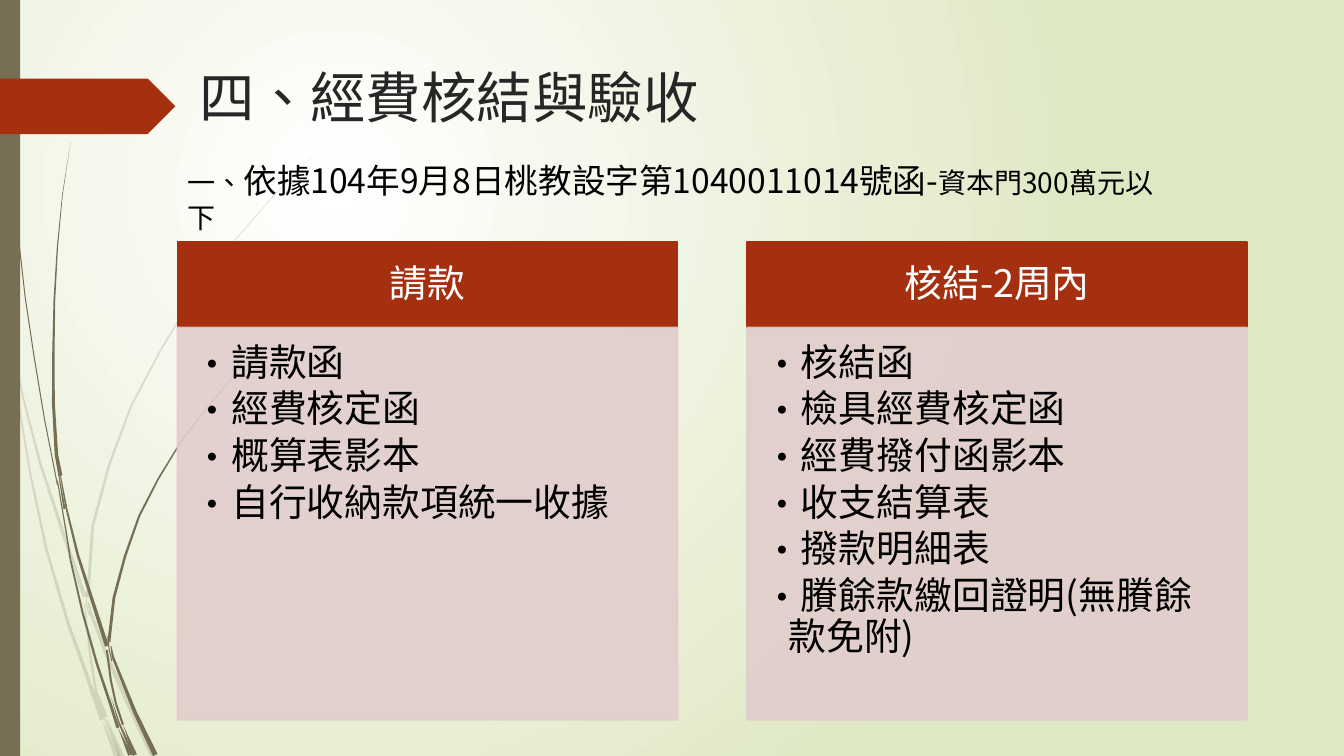
"""Build the slide on closing and accepting project expenses."""
from dataclasses import dataclass
from math import hypot

from lxml import etree
from pptx import Presentation
from pptx.dml.color import RGBColor
from pptx.enum.shapes import MSO_SHAPE
from pptx.enum.text import MSO_ANCHOR, PP_ALIGN
from pptx.oxml.ns import qn
from pptx.util import Inches, Pt

RECTANGLE, PENTAGON = MSO_SHAPE.RECTANGLE, MSO_SHAPE.PENTAGON
TOP, MIDDLE = MSO_ANCHOR.TOP, MSO_ANCHOR.MIDDLE
LEFT, CENTER = PP_ALIGN.LEFT, PP_ALIGN.CENTER


@dataclass(frozen=True)
class Theme:
    """Colours, typeface and type sizes of the slide."""
    font: str = "Noto Sans CJK SC"
    grass: str = "766F54"
    accent: str = "A53010"
    panel: str = "E1CDCC"
    title: str = "262626"
    body: str = "000000"
    light: str = "FFFFFF"
    background: str = "DFE8C4"
    title_size: float = 39.6
    intro_size: float = 24
    note_size: float = 20
    card_size: float = 27


@dataclass(frozen=True)
class Blade:
    """A piece of grass along a centre line, with its start and end widths."""
    start_width: float
    end_width: float
    points: tuple[tuple[float, float], ...]


@dataclass(frozen=True)
class Card:
    """A heading above a panel of bullet points."""
    heading: str
    items: tuple[str, ...]


THEME = Theme()
PALE_BLADES = (
    Blade(0.04, 0.01, ((0, 2.9), (0.06, 3.18), (0.11, 3.5))),
    Blade(0.01, 0.04, ((0.14, 3.45), (0.23, 3.95), (0.4, 4.6), (0.6, 5.21), (0.84, 5.92))),
    Blade(0.02, 0.05, ((0.88, 5.98), (0.9, 6.08), (1.07, 6.53), (1.25, 6.93), (1.52, 7.51))),
    Blade(0, 0.05, ((1.05, 7.11), (1.21, 7.51))),
    Blade(0.01, 0.04, ((0.11, 3.5), (0.17, 3.92), (0.3, 4.7), (0.46, 5.45), (0.68, 6.2),
                       (0.84, 6.64), (1.01, 7.14))),
    Blade(0.01, 0.03, ((0.84, 5.99), (0.86, 6.2), (0.89, 6.46), (0.95, 6.85), (1.05, 7.11))),
    Blade(0, 0.03, ((3.12, 1.53), (2.9, 1.75), (2.68, 1.98), (2.28, 2.44), (1.91, 2.95),
                    (1.59, 3.48), (1.3, 4.03), (1.08, 4.62), (0.92, 5.22), (0.87, 5.92))),
    Blade(0, 0.05, ((1.01, 7.14), (1.16, 7.51))),
    Blade(0.01, 0.01, ((0.86, 5.86), (0.86, 6), (0.88, 6.1))),
    Blade(0, 0.02, ((0.93, 6.83), (1.02, 7.09), (1.19, 7.51))),
)
DARK_BLADES = (
    Blade(0.01, 0.01, ((0.04, 0), (0.05, 0.48), (0.08, 1.1), (0.12, 1.72), (0.18, 2.33),
                       (0.25, 2.95), (0.34, 3.55), (0.44, 4.15), (0.57, 4.81))),
    Blade(0.01, 0.04, ((0.6, 4.72), (0.66, 5.05), (0.77, 5.5), (0.9, 5.91), (1.06, 6.41))),
    Blade(0.01, 0.05, ((1.1, 6.41), (1.12, 6.52), (1.34, 7.07), (1.54, 7.49))),
    Blade(0.01, 0.03, ((0.57, 4.77), (0.66, 5.3), (0.7, 5.56), (0.82, 6.08), (0.96, 6.58),
                       (1.1, 7), (1.17, 7.22))),
    Blade(0, 0.04, ((0.7, 1.41), (0.62, 1.93), (0.57, 2.45), (0.54, 2.97), (0.53, 3.49),
                    (0.53, 4), (0.56, 4.51), (0.6, 4.72))),
    Blade(0, 0.04, ((1.22, 7.19), (1.34, 7.49))),
    Blade(0, 0.02, ((0.55, 4.49), (0.59, 4.75), (0.64, 5.05))),
    Blade(0, 0.03, ((2.6, 3.44), (2.45, 3.58), (2.31, 3.74), (2.04, 4.06), (1.79, 4.39),
                    (1.57, 4.75), (1.38, 5.12), (1.24, 5.52), (1.13, 5.93), (1.08, 6.37))),
    Blade(0, 0.04, ((1.17, 7.22), (1.29, 7.49))),
    Blade(0.02, 0.02, ((1.06, 6.45), (1.1, 6.75), (1.15, 6.98), (1.22, 7.19))),
    Blade(0.01, 0.01, ((1.07, 6.31), (1.08, 6.43), (1.11, 6.56))),
    Blade(0, 0.03, ((1.1, 6.91), (1.18, 7.17), (1.32, 7.49))),
)
CARDS = (
    Card("請款", ("請款函", "經費核定函", "概算表影本", "自行收納款項統一收據")),
    Card("核結-2周內", ("核結函", "檢具經費核定函", "經費撥付函影本", "收支結算表",
                     "撥款明細表", "賸餘款繳回證明(無賸餘款免附)")),
)
CARD_LEFT, CARD_TOP, CARD_WIDTH, CARD_PITCH = 1.76, 2.4, 4.96, 5.65
HEADING_HEIGHT, PANEL_HEIGHT = 0.85, 3.89


def set_font(font, size: float, color: str) -> None:
    """Apply typeface, size, colour and language to all scripts."""
    font.name, font.size = THEME.font, Pt(size)
    font.color.rgb = RGBColor.from_string(color)
    font._element.set("lang", "zh-TW")
    font._element.find(qn("a:latin")).addnext(etree.Element(qn("a:ea"), typeface=THEME.font))


def set_frame(frame, insets: tuple[float, ...] = (0.1, 0.05, 0.1, 0.05), anchor=TOP) -> None:
    """Set wrapping, insets and vertical anchor of a text frame."""
    frame.word_wrap, frame.vertical_anchor = True, anchor
    (frame.margin_left, frame.margin_top,
     frame.margin_right, frame.margin_bottom) = map(Inches, insets)


def paint(shape, color: str, opacity: int = 100, outlined: bool = False) -> None:
    """Fill a shape, with a matching outline if wanted."""
    shape.shadow.inherit = False
    shape.line.width = Pt(1.25)
    shape.line.fill.background()
    for fill in (shape.fill, shape.line.fill) if outlined else (shape.fill,):
        fill.solid()
        fill.fore_color.rgb = RGBColor.from_string(color)
        if opacity < 100:
            color_element = fill._xPr.find(qn("a:solidFill"))[0]
            etree.SubElement(color_element, qn("a:alpha"), val=str(opacity * 1000))


def add_block(slide, kind, box: tuple[float, ...], color: str, **style):
    """Add a painted preset shape."""
    shape = slide.shapes.add_shape(kind, *map(Inches, box))
    paint(shape, color, **style)
    return shape


def add_blade(slide, blade: Blade, opacity: int) -> None:
    """Draw a piece of grass as a closed tapering outline."""
    last = len(blade.points) - 1
    near, far = [], []
    for index, (x, y) in enumerate(blade.points):
        (x0, y0), (x1, y1) = blade.points[max(index - 1, 0)], blade.points[min(index + 1, last)]
        width = blade.start_width + (blade.end_width - blade.start_width) * index / last
        half = width / 2 / hypot(x1 - x0, y1 - y0)
        shift_x, shift_y = (y1 - y0) * half, (x0 - x1) * half
        near.append((Inches(x - shift_x), Inches(y - shift_y)))
        far.append((Inches(x + shift_x), Inches(y + shift_y)))
    builder = slide.shapes.build_freeform(*near[0])
    builder.add_line_segments(near[1:] + far[::-1], close=True)
    paint(builder.convert_to_shape(), THEME.grass, opacity)


def add_card(slide, card: Card, left: float) -> None:
    """Draw a heading block and its bullet panel."""
    heading = add_block(slide, RECTANGLE, (left, CARD_TOP, CARD_WIDTH, HEADING_HEIGHT),
                        THEME.accent, outlined=True)
    set_frame(heading.text_frame, (0.21, 0.12, 0.21, 0.12), MIDDLE)
    paragraph = heading.text_frame.paragraphs[0]
    paragraph.text, paragraph.alignment, paragraph.line_spacing = card.heading, CENTER, 0.9
    set_font(paragraph.font, THEME.card_size, THEME.light)
    panel_box = (left, CARD_TOP + HEADING_HEIGHT, CARD_WIDTH, PANEL_HEIGHT)
    panel = add_block(slide, RECTANGLE, panel_box, THEME.panel, opacity=90, outlined=True)
    set_frame(panel.text_frame, (0.16, 0.16, 0.21, 0.24))
    panel.text_frame.text = "\n".join(card.items)
    for paragraph in panel.text_frame.paragraphs:
        paragraph.alignment, paragraph.line_spacing = LEFT, 0.9
        paragraph.space_after = Pt(4.05)
        set_font(paragraph.font, THEME.card_size, THEME.body)
        properties = paragraph._p.get_or_add_pPr()
        properties.set("marL", str(Inches(0.25)))
        properties.set("indent", str(Inches(-0.25)))
        for tag, attributes in (("a:buFont", {"typeface": THEME.font}), ("a:buChar", {"char": "•"})):
            properties.find(qn("a:defRPr")).addprevious(etree.Element(qn(tag), attributes))


def set_background(fill) -> None:
    """Give the background a circular gradient."""
    fill.gradient()
    for stop, position, color in zip(fill.gradient_stops, (0, 1), (THEME.light, THEME.background)):
        stop.position, stop.color.rgb = position, RGBColor.from_string(color)
    linear = next(fill._xPr.iter(qn("a:lin")))
    circle = etree.Element(qn("a:path"), path="circle")
    etree.SubElement(circle, qn("a:fillToRect"), l="50000", t="50000", r="100000", b="100000")
    linear.getparent().replace(linear, circle)


def main() -> None:
    """Build and save the slide."""
    presentation = Presentation()
    presentation.slide_width, presentation.slide_height = Inches(13.33), Inches(7.5)
    slide = presentation.slides.add_slide(presentation.slide_layouts[5])
    set_background(slide.background.fill)
    for blades, opacity in ((PALE_BLADES, 20), (DARK_BLADES, 100)):
        for blade in blades:
            add_blade(slide, blade, opacity)
    add_block(slide, RECTANGLE, (0, 0, 0.2, 7.5), THEME.grass)
    add_block(slide, PENTAGON, (0, 0.78, 1.74, 0.55), THEME.accent)
    title = slide.shapes.title
    title.left, title.top, title.width, title.height = map(Inches, (1.88, 0.58, 9.75, 1.4))
    set_frame(title.text_frame)
    paragraph = title.text_frame.paragraphs[0]
    paragraph.text, paragraph.alignment = "四、經費核結與驗收", LEFT
    set_font(paragraph.font, THEME.title_size, THEME.title)
    intro = slide.shapes.add_textbox(*map(Inches, (1.76, 1.54, 9.93, 0.5)))
    set_frame(intro.text_frame)
    for text, size in (("一、", THEME.note_size),
                       ("依據104年9月8日桃教設字第1040011014號函-", THEME.intro_size),
                       ("資本門300萬元以下", THEME.note_size)):
        run = intro.text_frame.paragraphs[0].add_run()
        run.text = text
        set_font(run.font, size, THEME.body)
    for index, card in enumerate(CARDS):
        add_card(slide, card, CARD_LEFT + index * CARD_PITCH)
    presentation.save("out.pptx")


if __name__ == "__main__":
    main()
